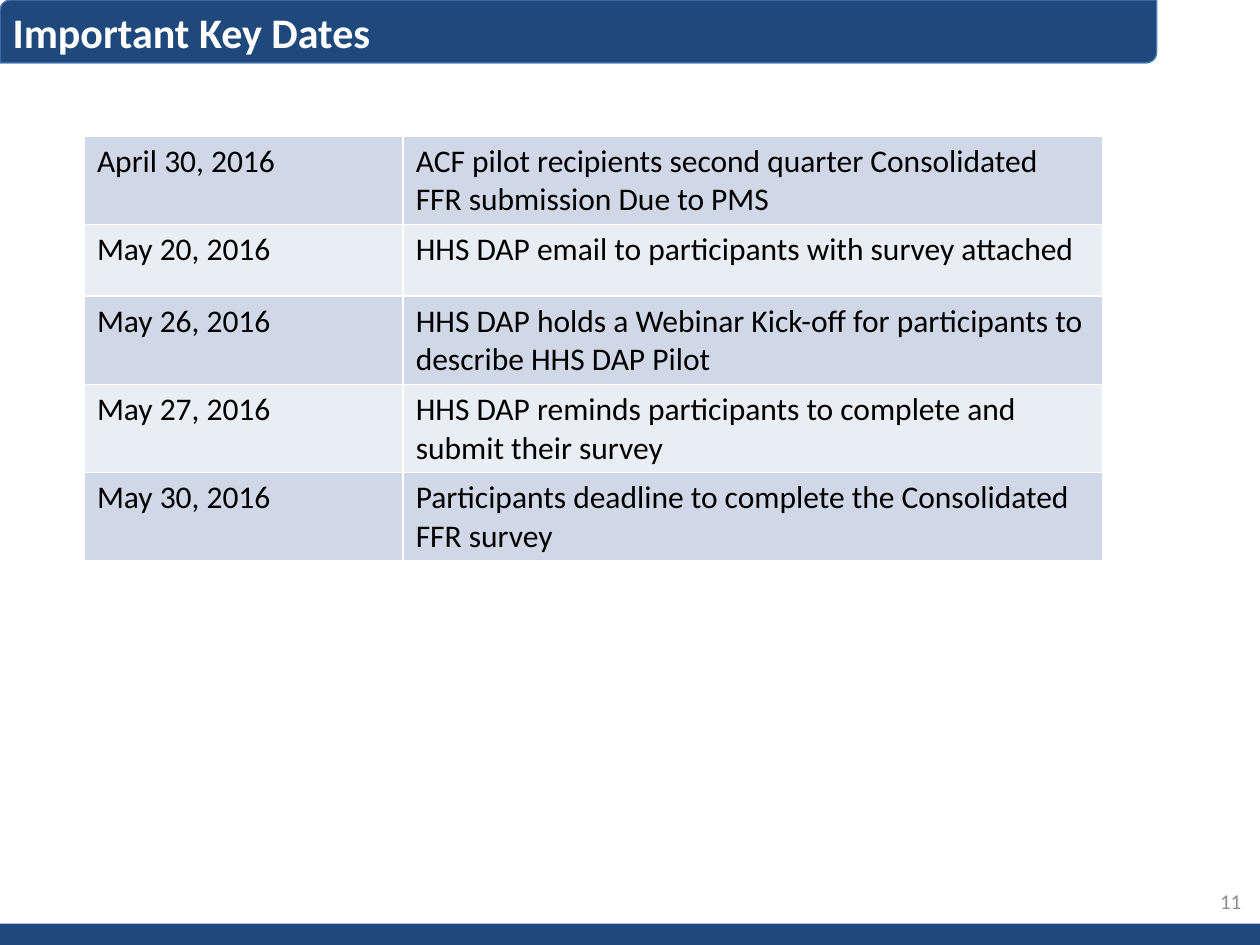
from lxml import etree
from pptx import Presentation
from pptx import util as u
from pptx.dml import color
from pptx.enum import shapes, text
from pptx.oxml import ns

NAVY, WHITE = "1F497D", "FFFFFF"
BANDS = ["D0D8E8", "E9EDF4"]
KEY_DATES = [
    ("April 30, 2016", "ACF pilot recipients second quarter Consolidated FFR submission Due to PMS"),
    ("May 20, 2016", "HHS DAP email to participants with survey attached"),
    ("May 26, 2016", "HHS DAP holds a Webinar Kick-off for participants to describe HHS DAP Pilot"),
    ("May 27, 2016", "HHS DAP reminds participants to complete and submit their survey"),
    ("May 30, 2016", "Participants deadline to complete the Consolidated FFR survey"),
]


def rgb(value):
    return color.RGBColor.from_string(value)


def inches(*lengths):
    return [u.Inches(length) for length in lengths]


def write(frame, words, size, ink, bold=False, align=text.PP_ALIGN.LEFT):
    frame.text = words
    para = frame.paragraphs[0]
    para.alignment = align
    font = para.runs[0].font
    font.name, font.size, font.bold = "Calibri", u.Pt(size), bold
    font.color.rgb = rgb(ink)


def add_bar(page, kind, box, outline=None):
    bar = page.shapes.add_shape(kind, *inches(*box))
    bar.shadow.inherit = False
    bar.fill.solid()
    bar.fill.fore_color.rgb = rgb(NAVY)
    if outline:
        bar.line.color.rgb = rgb(outline)
        bar.line.width = u.Pt(0.75)
    else:
        bar.line.fill.background()


def add_header(page, box, words):
    left, top, width, height = box
    add_bar(page, shapes.MSO_SHAPE.ROUND_2_DIAG_RECTANGLE, box, "4B7EBC")
    title = page.shapes.title
    title.left, title.top, title.width, title.height = inches(left, top, width - 0.18, height)
    title.element.getparent().append(title.element)
    frame = title.text_frame
    write(frame, words, 24, WHITE, bold=True)
    frame.vertical_anchor = text.MSO_ANCHOR.TOP
    frame.auto_size = text.MSO_AUTO_SIZE.SHAPE_TO_FIT_TEXT


def add_footer(page, box, number):
    left, top, width, height = box
    add_bar(page, shapes.MSO_SHAPE.RECTANGLE, box)
    label = page.shapes.add_textbox(*inches(left + width - 2.38, top - 0.38, 2.33, 0.4))
    frame = label.text_frame
    frame.word_wrap = True
    frame.vertical_anchor = text.MSO_ANCHOR.MIDDLE
    write(frame, number, 12, "8C8C8C", align=text.PP_ALIGN.RIGHT)


def add_borders(cell):
    properties = cell._tc.get_or_add_tcPr()
    for index, side in enumerate(["lnL", "lnR", "lnT", "lnB"]):
        line = etree.Element(ns.qn("a:" + side), w=str(u.Pt(1)))
        fill = etree.SubElement(line, ns.qn("a:solidFill"))
        etree.SubElement(fill, ns.qn("a:srgbClr"), val=WHITE)
        properties.insert(index, line)


def add_dates_table(page, box, entries):
    table = page.shapes.add_table(len(entries), 2, *inches(*box)).table
    table.first_row = table.horz_banding = False
    date_width = 2.53
    table.columns[0].width, table.columns[1].width = inches(date_width, box[2] - date_width)
    for row, entry in enumerate(entries):
        for column, words in enumerate(entry):
            cell = table.cell(row, column)
            write(cell.text_frame, words, 18, "000000")
            cell.fill.solid()
            cell.fill.fore_color.rgb = rgb(BANDS[row % 2])
            add_borders(cell)


def main():
    deck = Presentation()
    deck.slide_width, deck.slide_height = inches(10, 7.5)
    page = deck.slides.add_slide(deck.slide_layouts[5])
    add_footer(page, (0, 7.33, 10, 0.17), "11")
    add_header(page, (0, 0, 9.18, 0.5), "Important Key Dates")
    add_dates_table(page, (0.67, 1.08, 8.08, 2.85), KEY_DATES)
    deck.save("out.pptx")


if __name__ == "__main__":
    main()
